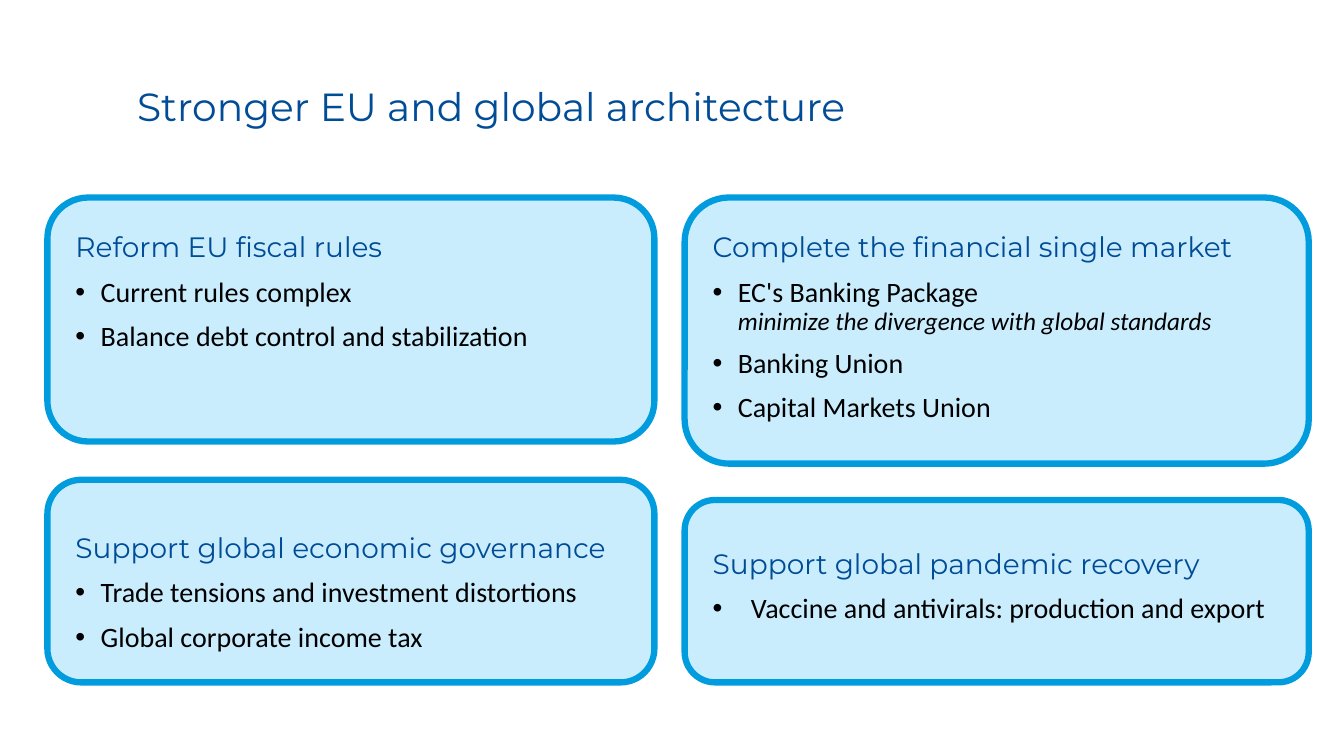
from lxml.etree import SubElement
from pptx import Presentation
from pptx.dml.color import RGBColor
from pptx.enum.shapes import MSO_SHAPE
from pptx.enum.text import MSO_ANCHOR
from pptx.oxml.ns import qn
from pptx.util import Inches, Pt

COLORS = {"navy": "004C97", "border": "009CDE", "card": "CAEDFE", "text": "000000"}

# Each topic: heading, space before it in points, bullet indent, bullets.
# A bullet is a pair: its text and an italic remark below it.
LEFT_TOPICS = [
    ("Reform EU fiscal rules", 0, 0.25,
     [("Current rules complex", ""),
      ("Balance debt control and stabilization", "")]),
    ("Support global economic governance", 130, 0.25,
     [("Trade tensions and investment distortions", ""),
      ("Global corporate income tax", "")]),
]
RIGHT_TOPICS = [
    ("Complete the financial single market", 0, 0.25,
     [("EC's Banking Package", "minimize the divergence with global standards"),
      ("Banking Union", ""),
      ("Capital Markets Union", "")]),
    ("Support global pandemic recovery", 90, 0.38,
     [("Vaccine and antivirals: production and export", "")]),
]


def color(name):
    return RGBColor.from_string(COLORS[name])


def style(paragraph, font_name, size, color_name, space_before=0):
    paragraph.line_spacing = 0.9
    paragraph.space_before = Pt(space_before)
    paragraph.font.name = font_name
    paragraph.font.size = Pt(size)
    paragraph.font.color.rgb = color(color_name)


def add_bullet(paragraph, indent):
    properties = paragraph._p.get_or_add_pPr()
    properties.set("marL", str(Inches(indent)))
    properties.set("indent", str(-Inches(indent)))
    SubElement(properties, qn("a:buFont")).set("typeface", "Arial")
    SubElement(properties, qn("a:buChar")).set("char", "•")


def add_title(slide, left, top, width, height):
    frame = slide.shapes.add_textbox(
        Inches(left), Inches(top), Inches(width), Inches(height)).text_frame
    frame.word_wrap = True
    frame.vertical_anchor = MSO_ANCHOR.MIDDLE
    frame.margin_left = frame.margin_right = 0
    frame.margin_top = frame.margin_bottom = 0
    heading = frame.paragraphs[0]
    heading.text = "Stronger EU and global architecture"
    style(heading, "Montserrat", 28, "navy")


def add_card(slide, left, top, width, height):
    card = slide.shapes.add_shape(
        MSO_SHAPE.ROUNDED_RECTANGLE,
        Inches(left), Inches(top), Inches(width), Inches(height))
    card.shadow.inherit = False
    card.fill.solid()
    card.fill.fore_color.rgb = color("card")
    card.line.color.rgb = color("border")
    card.line.width = Pt(4.5)


def add_topics(slide, left, top, width, height, topics):
    frame = slide.shapes.add_textbox(
        Inches(left), Inches(top), Inches(width), Inches(height)).text_frame
    frame.word_wrap = True
    for number, (heading, gap, indent, bullets) in enumerate(topics):
        title = frame.add_paragraph() if number else frame.paragraphs[0]
        title.text = heading
        style(title, "Montserrat", 20, "navy", gap)
        for point, remark in bullets:
            bullet = frame.add_paragraph()
            add_bullet(bullet, indent)
            bullet.text = point
            style(bullet, "Calibri", 20, "text", 10)
            if remark:
                bullet.add_line_break()
                aside = bullet.add_run()
                aside.text = remark
                aside.font.size = Pt(18)
                aside.font.italic = True


def add_column(slide, left, top, width, height, upper, lower, text_width, topics):
    """Place an upper and a lower card at the ends of the box, and their text."""
    add_card(slide, left, top, width, upper)
    add_card(slide, left, top + height - lower, width, lower)
    add_topics(slide, left + 0.18, top + 0.31, text_width, height - 0.32, topics)


def main():
    deck = Presentation()
    deck.slide_width, deck.slide_height = Inches(13.33), Inches(7.5)
    slide = deck.slides.add_slide(deck.slide_layouts[6])
    add_title(slide, 1.36, 0.54, 10.62, 1.07)
    add_column(slide, 0.47, 1.96, 6.02, 4.81, 2.42, 2.01, 6.15, LEFT_TOPICS)
    add_column(slide, 6.79, 1.96, 6.19, 4.81, 2.64, 1.81, 5.84, RIGHT_TOPICS)
    deck.save("out.pptx")


if __name__ == "__main__":
    main()
